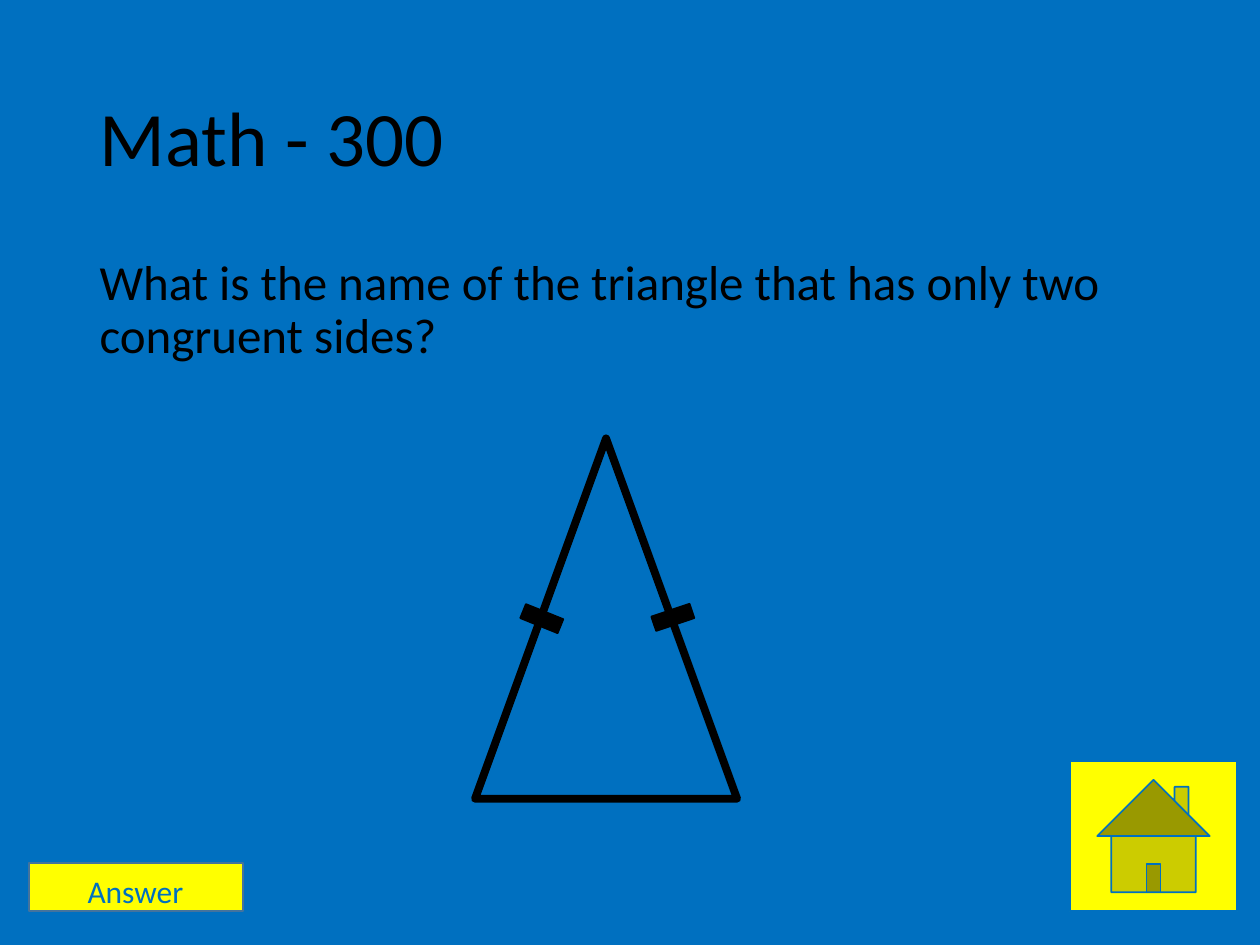
import pptx
import pptx.util
import pptx.dml.color
import pptx.enum.shapes
import pptx.enum.text
import lxml.etree

theme = {
    "font": "Calibri",
    "blue": pptx.dml.color.RGBColor.from_string("0070C0"),
    "edge": pptx.dml.color.RGBColor.from_string("43739E"),
    "yellow": pptx.dml.color.RGBColor.from_string("FFFF00"),
    "black": pptx.dml.color.RGBColor.from_string("000000"),
    "title": pptx.util.Pt(44),
    "body": pptx.util.Pt(28),
    "label": pptx.util.Pt(18),
}

presentation = pptx.Presentation()
presentation.slide_width = pptx.util.Inches(10)
presentation.slide_height = pptx.util.Inches(7.5)
column = presentation.slide_width / 100
row = presentation.slide_height / 75

slide = presentation.slides.add_slide(presentation.slide_layouts[1])
slide.background.fill.solid()
slide.background.fill.fore_color.rgb = theme["blue"]


def place(shape, left, top, width, height):
    box = {"left": left * column, "top": top * row,
           "width": width * column, "height": height * row}
    for name, value in box.items():
        setattr(shape, name, int(value))


def write(shape, text, size, color, anchor, paragraph_format):
    frame_format = {"word_wrap": True, "vertical_anchor": anchor,
                    "auto_size": pptx.enum.text.MSO_AUTO_SIZE.NONE}
    for name, value in frame_format.items():
        setattr(shape.text_frame, name, value)
    paragraph = shape.text_frame.paragraphs[0]
    for name, value in paragraph_format.items():
        setattr(paragraph, name, value)
    run = paragraph.add_run()
    run.text = text
    for name, value in {"name": theme["font"], "size": theme[size]}.items():
        setattr(run.font, name, value)
    run.font.color.rgb = theme[color]


align = pptx.enum.text.PP_ALIGN
anchors = pptx.enum.text.MSO_ANCHOR

title = slide.shapes.title
place(title, 6.9, 4, 86.2, 14.5)
write(title, "Math - 300", "title", "black", anchors.MIDDLE,
      {"alignment": align.LEFT, "line_spacing": 0.9})

question = slide.placeholders[1]
place(question, 6.9, 20, 86.2, 47.6)
write(question, "What is the name of the triangle that has only two congruent sides?",
      "body", "black", anchors.TOP,
      {"alignment": align.LEFT, "line_spacing": 0.9, "space_before": pptx.util.Pt(10)})
properties = question.text_frame.paragraphs[0]._p.get_or_add_pPr()
for name in ("marL", "indent"):
    properties.set(name, "0")
lxml.etree.SubElement(properties, pptx.oxml.ns.qn("a:buNone"))

answer = slide.shapes.add_group_shape()
kinds = pptx.enum.shapes.MSO_SHAPE
drawings = [
    (slide, kinds.ACTION_BUTTON_HOME, (84.9, 60.4, 13.3, 11.9), 0, "yellow", "blue", 1),
    (answer, kinds.ACTION_BUTTON_CUSTOM, (2.3, 68.5, 17, 3.8), 0, "yellow", "edge", 1),
    (slide, kinds.ISOSCELES_TRIANGLE, (37.7, 34.8, 20.8, 28.6), 0, None, "black", 4.5),
    (slide, kinds.RECTANGLE, (41.4, 48.5, 3.2, 1.2), 22, "black", "black", 1),
    (slide, kinds.RECTANGLE, (51.8, 48.4, 3.2, 1.2), 341.4, "black", "black", 1),
]
for parent, kind, box, rotation, fill, line, weight in drawings:
    shape = parent.shapes.add_shape(kind, 0, 0, 0, 0)
    place(shape, *box)
    shape.rotation = rotation
    shape.shadow.inherit = False
    if fill:
        shape.fill.solid()
        shape.fill.fore_color.rgb = theme[fill]
    else:
        shape.fill.background()
    shape.line.color.rgb = theme[line]
    shape.line.width = pptx.util.Pt(weight)

label_box = [int(length) for length in (2.9 * column, 68.7 * row, 15.7 * column, 4 * row)]
label = answer.shapes.add_textbox(*label_box)
write(label, "Answer", "label", "blue", anchors.TOP, {"alignment": align.CENTER})

presentation.save("out.pptx")
